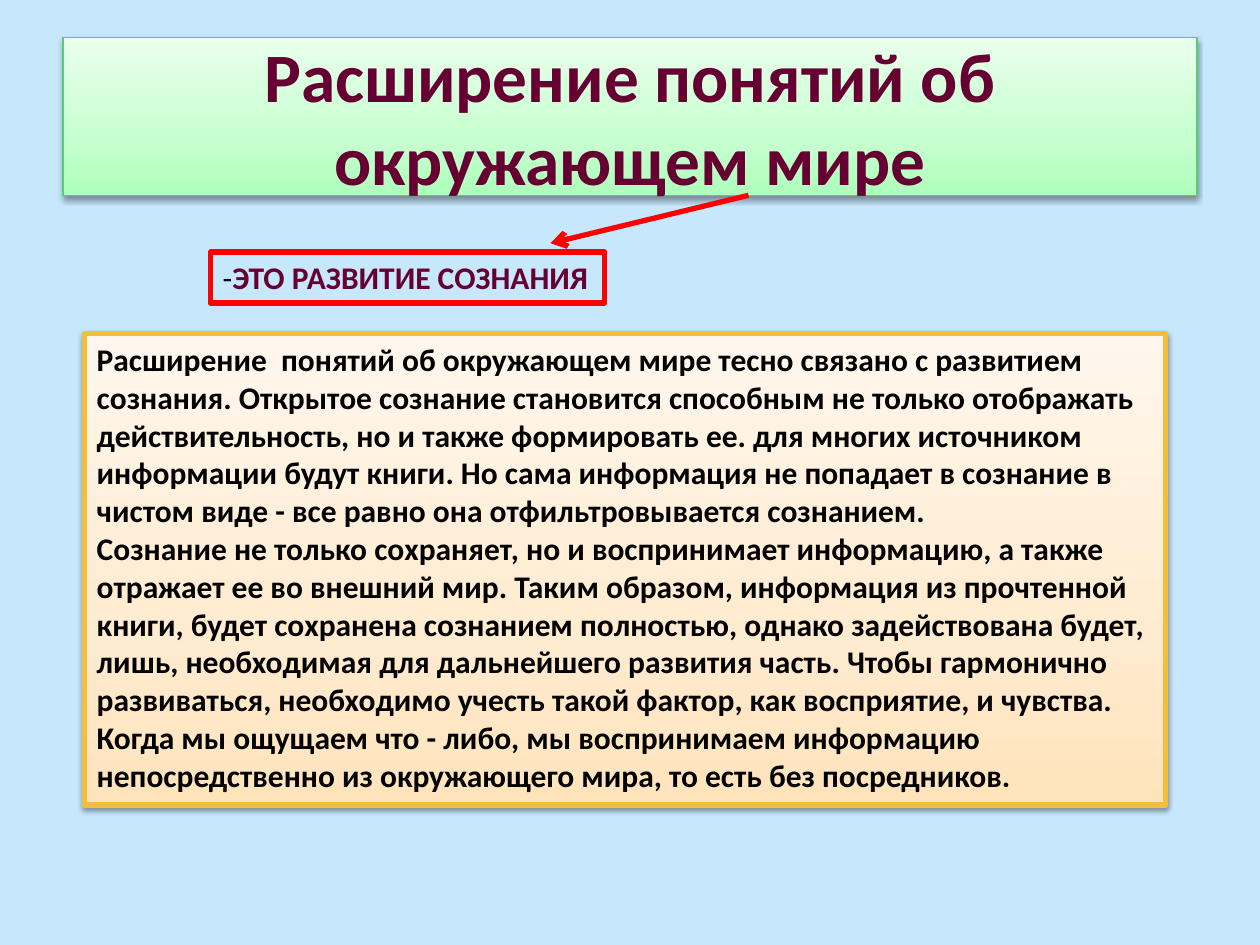
from copy import deepcopy
from dataclasses import dataclass

from lxml.etree import SubElement
from pptx import Presentation
from pptx.dml.color import RGBColor
from pptx.enum.shapes import MSO_CONNECTOR, MSO_SHAPE
from pptx.enum.text import MSO_ANCHOR, MSO_AUTO_SIZE, PP_ALIGN
from pptx.oxml.ns import qn
from pptx.shapes.autoshape import Shape
from pptx.slide import Slide
from pptx.text.text import Font
from pptx.util import Pt

COLORS = {
    "background": "C6E7FC",
    "heading": "660033",
    "body": "000000",
    "shadow": "000000",
    "accent": "FF0000",
    "green line": "56CE74",
    "orange line": "F4BE3A",
}
GREENS = ("AEFFBC", "C6FFCF", "E9FFEC")
ORANGES = ("FFE3BB", "FFEBCF", "FFF7ED")
STOPS = (0, 0.35, 1)

TITLE = "Расширение понятий об окружающем мире"
BODY = (
    "Расширение  понятий об окружающем мире тесно связано с развитием сознания. "
    "Открытое сознание становится способным не только отображать действительность, "
    "но и также формировать ее. для многих источником информации будут книги. "
    "Но сама информация не попадает в сознание в чистом виде - все равно она "
    "отфильтровывается сознанием.",
    "Сознание не только сохраняет, но и воспринимает информацию, а также отражает "
    "ее во внешний мир. Таким образом, информация из прочтенной книги, будет "
    "сохранена сознанием полностью, однако задействована будет, лишь, необходимая "
    "для дальнейшего развития часть. Чтобы гармонично развиваться, необходимо "
    "учесть такой фактор, как восприятие, и чувства. Когда мы ощущаем что - либо, "
    "мы воспринимаем информацию непосредственно из окружающего мира, то есть без "
    "посредников.",
)


@dataclass(frozen=True)
class Panel:
    left: float
    top: float
    width: float
    height: float
    gradient: tuple[str, ...]
    line: str
    line_width: float
    texts: tuple[str, ...]
    size: float
    color: str
    align: PP_ALIGN
    anchor: MSO_ANCHOR


PANELS = (
    Panel(36, 21.6, 648, 90, GREENS, "green line", 0.75, (TITLE,), 39.6,
          "heading", PP_ALIGN.CENTER, MSO_ANCHOR.MIDDLE),
    Panel(48.2, 190.8, 617.8, 269.3, ORANGES, "orange line", 3, BODY, 18,
          "body", PP_ALIGN.LEFT, MSO_ANCHOR.TOP),
)


def rgb(name: str) -> RGBColor:
    return RGBColor.from_string(COLORS[name])


def set_font(font: Font, size: float, color: str, bold: bool) -> None:
    font.name = "Calibri"
    font.size = Pt(size)
    font.bold = bold
    font.color.rgb = rgb(color)


def fill_gradient(shape: Shape, colors: tuple[str, ...]) -> None:
    shape.fill.gradient()
    shape.fill.gradient_angle = 90
    stop_list = shape._element.spPr.find(".//" + qn("a:gsLst"))
    stop_list.append(deepcopy(stop_list[0]))
    for stop, position, color in zip(shape.fill.gradient_stops, STOPS, colors):
        stop.position = position
        stop.color.rgb = RGBColor.from_string(color)


def add_shadow(shape: Shape) -> None:
    shape.shadow.inherit = False
    effects = shape._element.spPr.find(qn("a:effectLst"))
    shadow = SubElement(effects, qn("a:outerShdw"), blurRad=str(Pt(3.1)),
                        dist=str(Pt(1.6)), dir="5400000", rotWithShape="0")
    color = SubElement(shadow, qn("a:srgbClr"), val=COLORS["shadow"])
    SubElement(color, qn("a:alpha"), val="38000")


def add_panel(page: Slide, panel: Panel) -> None:
    box = page.shapes.add_shape(MSO_SHAPE.RECTANGLE, Pt(panel.left), Pt(panel.top),
                                Pt(panel.width), Pt(panel.height))
    fill_gradient(box, panel.gradient)
    box.line.color.rgb = rgb(panel.line)
    box.line.width = Pt(panel.line_width)
    add_shadow(box)
    frame = box.text_frame
    frame.word_wrap = True
    frame.vertical_anchor = panel.anchor
    for index, text in enumerate(panel.texts):
        para = frame.add_paragraph() if index else frame.paragraphs[0]
        para.text = text
        para.alignment = panel.align
        set_font(para.font, panel.size, panel.color, True)
        for span in para.runs:
            set_font(span.font, panel.size, panel.color, True)


def add_label(page: Slide) -> None:
    box = page.shapes.add_textbox(Pt(120.2), Pt(144), Pt(225.4), Pt(29.1))
    box.line.color.rgb = rgb("accent")
    box.line.width = Pt(3)
    frame = box.text_frame
    frame.word_wrap = False
    frame.auto_size = MSO_AUTO_SIZE.SHAPE_TO_FIT_TEXT
    para = frame.paragraphs[0]
    for text, color, bold in (("-", "body", False),
                              ("ЭТО РАЗВИТИЕ СОЗНАНИЯ", "heading", True)):
        span = para.add_run()
        span.text = text
        set_font(span.font, 18, color, bold)


def add_arrow(page: Slide) -> None:
    arrow = page.shapes.add_connector(MSO_CONNECTOR.STRAIGHT, Pt(427.7), Pt(111.6),
                                      Pt(314.6), Pt(139))
    arrow.line.color.rgb = rgb("accent")
    arrow.line.width = Pt(3)
    SubElement(arrow.line._get_or_add_ln(), qn("a:tailEnd"), type="arrow")
    SubElement(arrow._element.spPr, qn("a:effectLst"))


def main() -> None:
    """Build the slide about widening one's understanding of the world."""
    deck = Presentation()
    deck.slide_width, deck.slide_height = Pt(720), Pt(540)
    page = deck.slides.add_slide(deck.slide_layouts[6])
    page.background.fill.solid()
    page.background.fill.fore_color.rgb = rgb("background")
    for panel in PANELS:
        add_panel(page, panel)
    add_label(page)
    add_arrow(page)
    deck.save("out.pptx")


if __name__ == "__main__":
    main()
